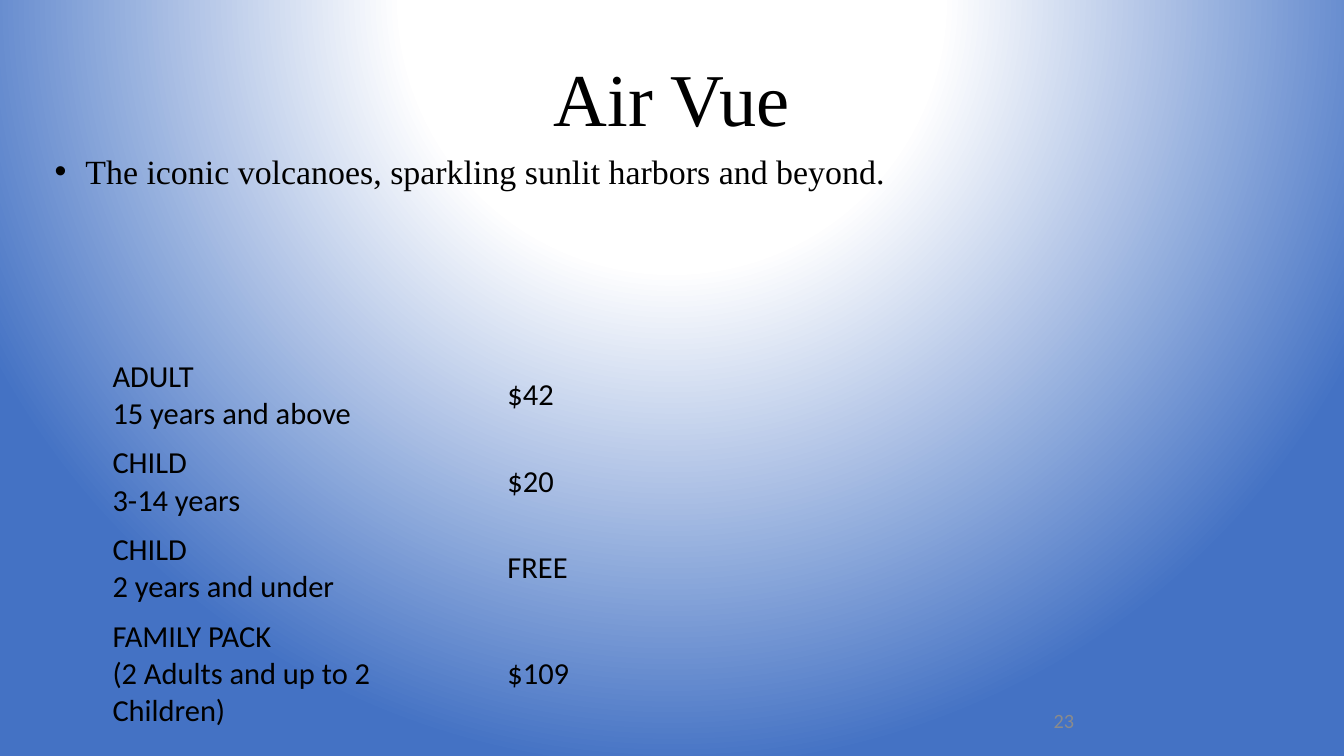
from lxml import etree
from pptx import Presentation
from pptx.dml.color import RGBColor
from pptx.enum.text import MSO_ANCHOR, PP_ALIGN
from pptx.oxml import parse_xml
from pptx.oxml.ns import nsdecls, qn
from pptx.util import Cm, Pt

MIDDLE, BOTTOM, TOP = MSO_ANCHOR.MIDDLE, MSO_ANCHOR.BOTTOM, MSO_ANCHOR.TOP
LEFT, CENTER, RIGHT = PP_ALIGN.LEFT, PP_ALIGN.CENTER, PP_ALIGN.RIGHT
NO_STYLE_NO_GRID = "{2D5ABB26-0587-4C30-8999-92F81FD0307C}"
COLORS = {"text": "000000", "number": "8B8B8B", "center": "FFFFFF", "edge": "4472C4"}
SERIF, SANS = "Times New Roman", "Calibri"


def format_runs(paragraph, font_name, size, color="text"):
    for run in paragraph.runs:
        run.font.name = font_name
        run.font.size = Pt(size)
        run.font.color.rgb = RGBColor.from_string(COLORS[color])


def add_text(slide, box, text, font_name, size, alignment, anchor, color="text"):
    shape = slide.shapes.add_textbox(*[Cm(length) for length in box])
    shape.text_frame.word_wrap = True
    shape.text_frame.vertical_anchor = anchor
    paragraph = shape.text_frame.paragraphs[0]
    paragraph.text = text
    paragraph.alignment = alignment
    paragraph.line_spacing = 0.9
    format_runs(paragraph, font_name, size, color)
    return paragraph


presentation = Presentation()
presentation.slide_width = Cm(28)
presentation.slide_height = Cm(15.75)
slide = presentation.slides.add_slide(presentation.slide_layouts[6])

slide.background.fill.solid()
background = slide.element.find(".//" + qn("p:bgPr"))
stops = "".join(
    f'<a:gs pos="{position * 1000}"><a:srgbClr val="{COLORS[name]}"/></a:gs>'
    for position, name in [(0, "center"), (35, "center"), (100, "edge")]
)
gradient = parse_xml(
    f'<a:gradFill {nsdecls("a")} rotWithShape="1"><a:gsLst>{stops}</a:gsLst>'
    '<a:path path="circle"><a:fillToRect l="50000" t="-80000" r="50000" b="180000"/>'
    "</a:path></a:gradFill>"
)
background.replace(background.find(qn("a:solidFill")), gradient)

add_text(slide, (0, 0.53, 28, 2.57), "Air Vue", SERIF, 44, CENTER, BOTTOM)

summary = add_text(
    slide, (0.74, 3.1, 18.62, 3.76),
    "The iconic volcanoes, sparkling sunlit harbors and beyond.",
    SERIF, 20, LEFT, TOP,
)
summary.space_after = Pt(6)
properties = summary._p.get_or_add_pPr()
properties.set("marL", str(Cm(0.79)))
properties.set("indent", str(Cm(-0.64)))
etree.SubElement(properties, qn("a:buFont")).set("typeface", "Arial")
etree.SubElement(properties, qn("a:buChar")).set("char", "•")

prices = [
    ("ADULT\v15 years and above", "", "$42"),
    ("CHILD\v3-14 years", "", "$20"),
    ("CHILD\v2 years and under", "", "FREE"),
    ("FAMILY PACK\v(2 Adults and up to 2 Children)", "", "$109"),
]
column_widths = [7.62, 0.58, 1.85]
row_heights = [1.8, 1.8, 1.8, 2.6]
frame = slide.shapes.add_table(
    len(prices), len(column_widths),
    Cm(2.09), Cm(7.34), Cm(sum(column_widths)), Cm(sum(row_heights)),
)
table = frame.table
table.first_row = False
table.horz_banding = False
table._tbl.tblPr.find(qn("a:tableStyleId")).text = NO_STYLE_NO_GRID
for column, width in zip(table.columns, column_widths):
    column.width = Cm(width)
for row, height, texts in zip(table.rows, row_heights, prices):
    row.height = Cm(height)
    for cell, text in zip(row.cells, texts):
        cell.fill.background()
        cell.vertical_anchor = MIDDLE
        paragraph = cell.text_frame.paragraphs[0]
        if text:
            paragraph.text = text
            format_runs(paragraph, SANS, 18)

add_text(slide, (16.6, 14.62, 6.03, 0.84), "23", SANS, 12, RIGHT, MIDDLE, "number")

presentation.save("out.pptx")
